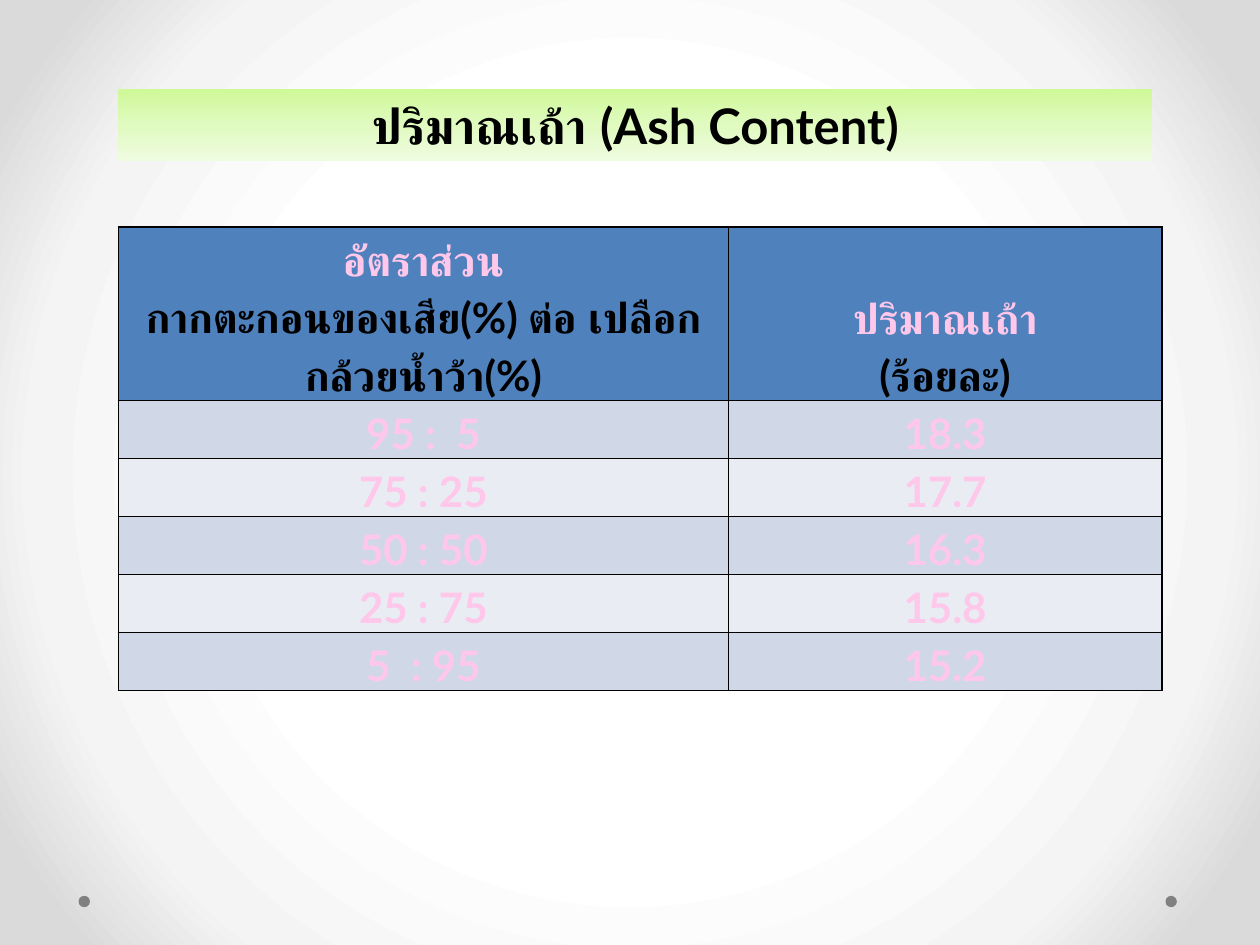
from typing import NamedTuple

from lxml import etree
from pptx import Presentation
from pptx import util as u
from pptx.dml.color import RGBColor
from pptx.enum import shapes, text
from pptx.oxml import ns

FONT = "Lato"
COLORS = {"ink": "000000", "dot": "808080"}
LEFT = 67.7
COLUMN_WIDTHS = (348.5, 247.7)
HEADER_HEIGHT, ROW_HEIGHT = 99.36, 33.12


class Gradient(NamedTuple):
    stops: dict[int, str]
    radial: bool = False


class Dot(NamedTuple):
    left: float
    top: float = 511.9
    size: float = 6.5


class Entry(NamedTuple):
    ratio: str
    ash: str


BACKDROP = Gradient({50: "FFFFFF", 76: "F4F4F4", 92: "DADADA"}, radial=True)
GREEN = Gradient({0: "CFF998", 50: "E0FAC0", 100: "EFFCE0"})
PINK = Gradient({0: "FFA3DF", 50: "FFC7EA", 100: "FFE4F4"})
DOTS = (Dot(666), Dot(44.9))
# A list of paragraphs, each a list of lines
HEADINGS = (
    [["อัตราส่วน", "กากตะกอนของเสีย(%) ต่อ เปลือกกล้วยน้ำว้า(%)"]],
    [["ปริมาณเถ้า"], ["(ร้อยละ)"]],
)
ENTRIES = (
    Entry("95 :  5", "18.3"),
    Entry("75 : 25", "17.7"),
    Entry("50 : 50", "16.3"),
    Entry("25 : 75", "15.8"),
    Entry("5  : 95", "15.2"),
)


def add_child(parent, tag: str, **attributes):
    return etree.SubElement(parent, ns.qn(tag), attributes)


def apply_gradient(fill, owner, gradient: Gradient) -> None:
    """Put a gradient where the solid fill of the owner element stands."""
    fill.solid()
    solid = owner.find(".//" + ns.qn("a:solidFill"))
    element = etree.Element(ns.qn("a:gradFill"), {"rotWithShape": "1"})
    stop_list = add_child(element, "a:gsLst")
    for position, color in gradient.stops.items():
        stop = add_child(stop_list, "a:gs", pos=str(position * 1000))
        add_child(stop, "a:srgbClr", val=color)
    if gradient.radial:
        circle = add_child(element, "a:path", path="circle")
        add_child(circle, "a:fillToRect", l="50000", t="50000", r="50000", b="50000")
    else:
        add_child(element, "a:lin", ang="5400000", scaled="0")
    solid.getparent().replace(solid, element)


def add_plain_shape(page, kind, left: float, top: float, width: float, height: float):
    shape = page.shapes.add_shape(kind, u.Pt(left), u.Pt(top), u.Pt(width), u.Pt(height))
    shape.shadow.inherit = False
    shape.line.fill.background()
    return shape


def write_text(frame, paragraphs: list[list[str]], size: float, spacing: float = 1) -> None:
    for number, lines in enumerate(paragraphs):
        para = frame.add_paragraph() if number else frame.paragraphs[0]
        para.alignment = text.PP_ALIGN.CENTER
        para.line_spacing = spacing
        for index, line in enumerate(lines):
            if index:
                para.add_line_break()
            span = para.add_run()
            span.text = line
            span.font.name = FONT
            span.font.size = u.Pt(size)
            span.font.bold = True
            span.font.color.rgb = RGBColor.from_string(COLORS["ink"])


def add_borders(cell) -> None:
    properties = cell._tc.get_or_add_tcPr()
    for index, side in enumerate(("a:lnL", "a:lnR", "a:lnT", "a:lnB")):
        line = etree.Element(ns.qn(side), {"w": str(u.Pt(1))})
        add_child(add_child(line, "a:solidFill"), "a:srgbClr", val=COLORS["ink"])
        properties.insert(index, line)


def fill_cell(cell, paragraphs: list[list[str]]) -> None:
    cell.vertical_anchor = text.MSO_ANCHOR.BOTTOM
    cell.margin_left = cell.margin_right = u.Pt(5)
    cell.margin_top = cell.margin_bottom = u.Pt(0)
    write_text(cell.text_frame, paragraphs, 24, 1.15)
    apply_gradient(cell.fill, cell._tc, PINK)
    add_borders(cell)


def add_dot(page, dot: Dot) -> None:
    shape = add_plain_shape(page, shapes.MSO_SHAPE.OVAL, dot.left, dot.top, dot.size, dot.size)
    shape.fill.solid()
    shape.fill.fore_color.rgb = RGBColor.from_string(COLORS["dot"])


def add_title(page) -> None:
    banner = add_plain_shape(page, shapes.MSO_SHAPE.RECTANGLE, LEFT, 50.9, 590.5, 41.2)
    apply_gradient(banner.fill, banner.element.spPr, GREEN)
    banner.text_frame.word_wrap = True
    write_text(banner.text_frame, [["ปริมาณเถ้า (Ash Content)"]], 28)


def add_ash_table(page) -> None:
    heights = [HEADER_HEIGHT] + [ROW_HEIGHT] * len(ENTRIES)
    table = page.shapes.add_table(
        len(heights), len(COLUMN_WIDTHS), u.Pt(LEFT), u.Pt(129.6),
        u.Pt(sum(COLUMN_WIDTHS)), u.Pt(sum(heights)),
    ).table
    for column, width in zip(table.columns, COLUMN_WIDTHS):
        column.width = u.Pt(width)
    body = [[[[value]] for value in entry] for entry in ENTRIES]
    for row, height, contents in zip(table.rows, heights, [HEADINGS, *body]):
        row.height = u.Pt(height)
        for cell, paragraphs in zip(row.cells, contents):
            fill_cell(cell, paragraphs)


def main() -> None:
    deck = Presentation()
    deck.slide_width, deck.slide_height = u.Pt(720), u.Pt(540)
    page = deck.slides.add_slide(deck.slide_layouts[6])
    apply_gradient(page.background.fill, page.element, BACKDROP)
    for dot in DOTS:
        add_dot(page, dot)
    add_title(page)
    add_ash_table(page)
    deck.save("out.pptx")


if __name__ == "__main__":
    main()
